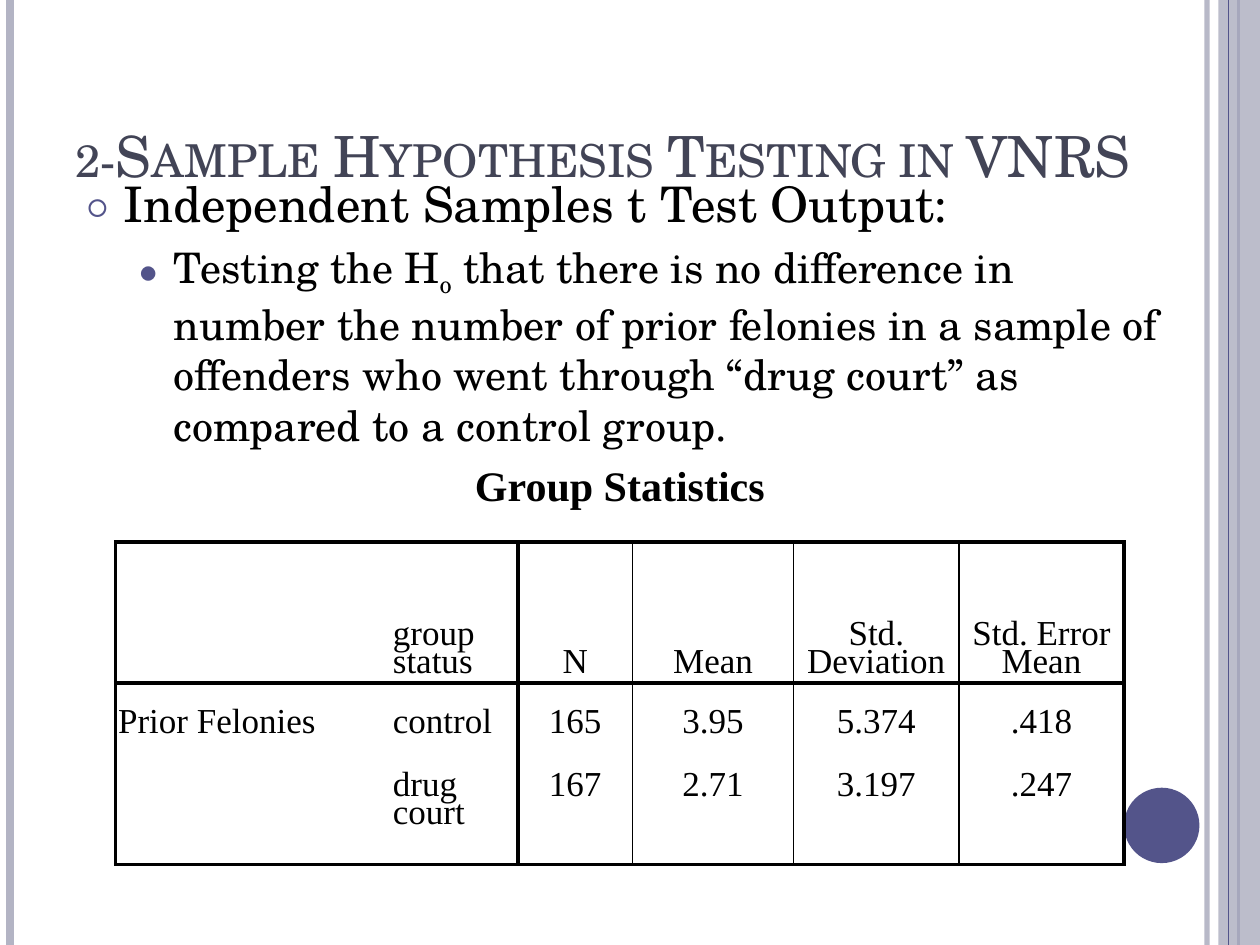
from lxml import etree
from pptx import Presentation, util as u
from pptx.dml.color import RGBColor
from pptx.enum import shapes, text
from pptx.oxml.ns import qn

# Content
TITLE = "2-Sample Hypothesis Testing in VNRS"
HEADING = "Independent Samples t Test Output:"
DETAIL = [
    ("Testing the H", 0),
    ("o", -25),
    (" that there is no difference in number the number of prior felonies in a "
     "sample of offenders who went through “drug court” as compared to a "
     "control group.", 0),
]
ROWS = [
    ["Group Statistics", "", "", "", "", ""],
    ["", "group status", "N", "Mean", "Std. Deviation", "Std. Error Mean"],
    ["Prior Felonies", "control", "165", "3.95", "5.374", ".418"],
    ["", "drug court", "167", "2.71", "3.197", ".247"],
]

# Look
COLOURS = {"accent": "53548A", "pale": "B3B4C4", "title": "424456",
           "ink": "000000", "paper": "FFFFFF"}
SERIF, TABLE_FONT = "TeX Gyre Schola", "Times New Roman"
PAGE_WIDTH, PAGE_HEIGHT = 25.4, 19.05
COLUMN_WIDTHS = [5.54, 2.57, 2.31, 3.25, 3.33, 3.33]
ROW_HEIGHTS = [1.83, 2.84, 1.83, 1.83]
# Border widths in points along each grid line; 0 is no border
VERTICAL_RULES = [2.25, 0, 2.25, 1, 1, 1, 2.25]
HORIZONTAL_RULES = [0, 2.25, 2.25, 0, 2.25]
# Edge decoration: x, width in points, colour, opacity in percent
BACK_LINES = [(24.33, 3, "pale", 93), (0.2, 4.5, "pale", 100),
              (24.97, 1.5, "accent", 100)]
FRONT_LINES = [(24.77, 0.75, "accent", 100)]


def rgb(name):
    return RGBColor.from_string(COLOURS[name])


def add_xml(parent, tag, **attributes):
    child = etree.SubElement(parent, qn(tag))
    for key, value in attributes.items():
        child.set(key, str(value))
    return child


def set_opacity(properties, percent):
    colour = next(properties.iter(qn("a:srgbClr")))
    add_xml(colour, "a:alpha", val=percent * 1000)


def add_text(paragraph, content, size=20, font=SERIF, colour="ink", bold=False,
             baseline=0, small_caps=False):
    run = paragraph.add_run()
    run.text = content
    run.font.size, run.font.name, run.font.bold = u.Pt(size), font, bold
    run.font.color.rgb = rgb(colour)
    properties = run.font._element
    if baseline:
        properties.set("baseline", str(baseline * 1000))
    if small_caps:
        properties.set("cap", "small")


def set_bullet(paragraph, character, size, left):
    properties = paragraph._p.get_or_add_pPr()
    properties.set("marL", str(u.Cm(left)))
    properties.set("indent", str(-u.Cm(0.76)))
    add_xml(add_xml(properties, "a:buClr"), "a:srgbClr", val=COLOURS["accent"])
    add_xml(properties, "a:buSzPct", val=size * 1000)
    add_xml(properties, "a:buFont", typeface=SERIF)
    add_xml(properties, "a:buChar", char=character)


def place(shape, left, top, width, height):
    shape.left, shape.top = u.Cm(left), u.Cm(top)
    shape.width, shape.height = u.Cm(width), u.Cm(height)


def add_edge_lines(slide, lines):
    for x, width, colour, opacity in lines:
        line = slide.shapes.add_connector(
            shapes.MSO_CONNECTOR.STRAIGHT, u.Cm(x), 0, u.Cm(x), u.Cm(PAGE_HEIGHT))
        line.line.width = u.Pt(width)
        line.line.color.rgb = rgb(colour)
        properties = line._element.spPr
        if opacity < 100:
            set_opacity(properties, opacity)
        add_xml(properties, "a:effectLst")


def add_plain_shape(slide, kind, colour, *box):
    shape = slide.shapes.add_shape(kind, *(u.Cm(length) for length in box))
    shape.shadow.inherit = False
    shape.fill.solid()
    shape.fill.fore_color.rgb = rgb(colour)
    shape.line.fill.background()
    return shape


def set_borders(cell, row, column):
    inner = row > 0
    # A merged cell takes its bottom border from the end of its span
    bottom = row + (cell.span_height if cell.is_merge_origin else 1)
    widths = {
        "a:lnL": VERTICAL_RULES[column] * inner,
        "a:lnR": VERTICAL_RULES[column + 1] * inner,
        "a:lnT": HORIZONTAL_RULES[row],
        "a:lnB": HORIZONTAL_RULES[bottom],
    }
    properties = cell._tc.get_or_add_tcPr()
    for tag, width in widths.items():
        border = add_xml(properties, tag, w=u.Pt(width))
        if width:
            add_xml(add_xml(border, "a:solidFill"), "a:srgbClr", val=COLOURS["ink"])
        else:
            add_xml(border, "a:noFill")


def fill_cell(cell, content, row, column):
    set_borders(cell, row, column)
    cell.fill.solid()
    cell.fill.fore_color.rgb = rgb("paper")
    cell.margin_left = cell.margin_right = u.Cm(0.05)
    cell.margin_bottom = u.Cm(0.05)
    # The first data row starts one line lower
    cell.margin_top = u.Cm(0.61 if row == 2 else 0.05)
    anchors = [text.MSO_ANCHOR.MIDDLE, text.MSO_ANCHOR.BOTTOM]
    cell.vertical_anchor = anchors[row] if row < 2 else text.MSO_ANCHOR.TOP
    if content:
        paragraph = cell.text_frame.paragraphs[0]
        paragraph.line_spacing = u.Pt(16)
        centred = row == 0 or column > 1
        paragraph.alignment = text.PP_ALIGN.CENTER if centred else text.PP_ALIGN.LEFT
        add_text(paragraph, content, size=20 if row else 24, font=TABLE_FONT,
                 bold=row == 0)


def add_statistics(slide):
    frame = slide.shapes.add_table(
        len(ROWS), len(COLUMN_WIDTHS), u.Cm(2.33), u.Cm(9.1),
        u.Cm(sum(COLUMN_WIDTHS)), u.Cm(sum(ROW_HEIGHTS)))
    table = frame.table
    table.first_row = table.horz_banding = False
    for column, width in zip(table.columns, COLUMN_WIDTHS):
        column.width = u.Cm(width)
    for row, height in zip(table.rows, ROW_HEIGHTS):
        row.height = u.Cm(height)
    table.cell(0, 0).merge(table.cell(0, 5))
    table.cell(2, 0).merge(table.cell(3, 0))
    for r, row in enumerate(ROWS):
        for c, content in enumerate(row):
            fill_cell(table.cell(r, c), content, r, c)


def main():
    presentation = Presentation()
    presentation.slide_width = u.Cm(PAGE_WIDTH)
    presentation.slide_height = u.Cm(PAGE_HEIGHT)
    slide = presentation.slides.add_slide(presentation.slide_layouts[1])

    # Edge decoration
    add_edge_lines(slide, BACK_LINES)
    band = add_plain_shape(slide, shapes.MSO_SHAPE.RECTANGLE, "pale",
                           24.56, 0, 0.84, PAGE_HEIGHT)
    set_opacity(band._element.spPr, 87)
    add_edge_lines(slide, FRONT_LINES)
    add_plain_shape(slide, shapes.MSO_SHAPE.OVAL, "accent", 22.66, 15.88, 1.52, 1.52)

    # Title
    title = slide.shapes.title
    place(title, 1.27, 0.76, 22.86, 3.18)
    title.text_frame.auto_size = text.MSO_AUTO_SIZE.NONE
    title.text_frame.vertical_anchor = text.MSO_ANCHOR.BOTTOM
    paragraph = title.text_frame.paragraphs[0]
    paragraph.alignment = text.PP_ALIGN.LEFT
    add_text(paragraph, TITLE, size=32.4, colour="title", small_caps=True)

    # Bulleted list
    body = slide.placeholders[1]
    place(body, 1.47, 3.38, 22.23, 6.55)
    body.text_frame.auto_size = text.MSO_AUTO_SIZE.NONE
    heading = body.text_frame.paragraphs[0]
    heading.space_before = u.Pt(6)
    set_bullet(heading, "○", 70, 0.76)
    add_text(heading, HEADING, size=28)
    detail = body.text_frame.add_paragraph()
    detail.level = 1
    set_bullet(detail, "●", 80, 1.78)
    for content, baseline in DETAIL:
        add_text(detail, content, size=24, baseline=baseline)

    # Table
    add_statistics(slide)
    presentation.save("out.pptx")


if __name__ == "__main__":
    main()
